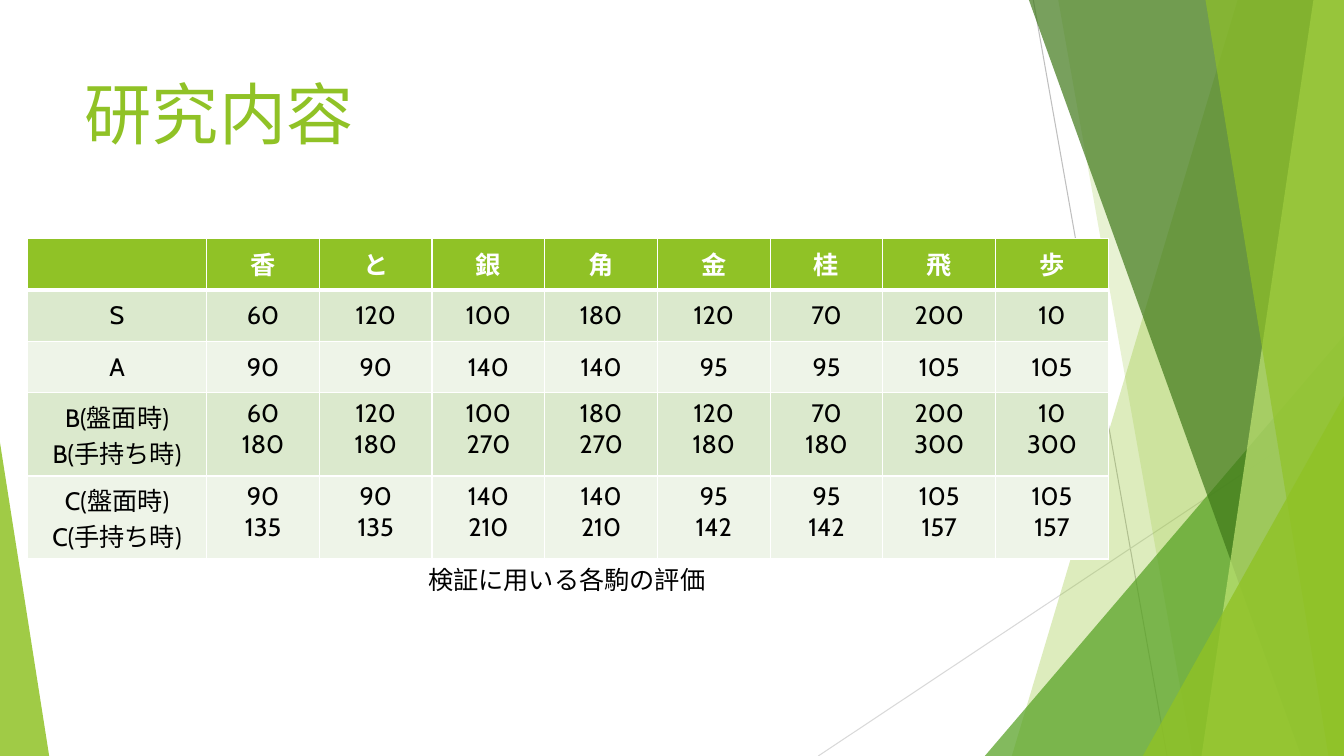
from lxml import etree
from pptx import Presentation
from pptx.dml.color import RGBColor
from pptx.enum import shapes, text
from pptx.oxml import ns
from pptx.util import Cm, Pt

COLORS = {"lime": "90C226", "green": "54A021", "forest": "3F7819", "pale": "C0E474",
          "gray": "BFBFBF", "light_gray": "D9D9D9", "white": "FFFFFF", "black": "000000",
          "band_dark": "DBE9CD", "band_light": "EEF4E8"}
FONT = "Cabin"
TITLE = "研究内容"
CAPTION = "検証に用いる各駒の評価"
PIECES = ["", "香", "と", "銀", "角", "金", "桂", "飛", "歩"]
ON_BOARD = {"S": [60, 120, 100, 180, 120, 70, 200, 10],
            "A": [90, 90, 140, 140, 95, 95, 105, 105]}
IN_HAND = {"B": [180, 180, 270, 270, 180, 180, 300, 300],
           "C": [135, 135, 210, 210, 142, 142, 157, 157]}

# Lengths in cm
WIDTH, HEIGHT = 33.87, 19.05
RAYS = [((26.04, 0), (29.41, HEIGHT), "gray"),
        ((WIDTH, 10.24), (20.62, HEIGHT), "light_gray")]
# ("pane", top x, bottom x, colour, opacity %): reaches the right edge
# ("triangle", left, top, width, apex, colour, opacity %): reaches the bottom
FACETS = [("pane", 31.19, 25.5, "lime", 30),
          ("pane", 26.67, 30.05, "lime", 20),
          ("triangle", 24.82, 8.46, 9.05, 1, "green", 72),
          ("pane", 25.93, 32.79, "forest", 70),
          ("pane", 33.1, 30.28, "pale", 70),
          ("pane", 30.38, 33.48, "lime", 65),
          ("triangle", 28.8, 9.98, 5.07, 1, "lime", 80),
          ("triangle", 0, 11.15, 1.24, 0, "lime", 85)]
TABLE_LEFT, TABLE_TOP = 0.69, 6.0
LABEL_WIDTH, VALUE_WIDTH, ROW_HEIGHT = 4.52, 2.84, 1.3


def rgb(name):
    return RGBColor.from_string(COLORS[name])


def write(tf, lines, color, size=18, bold=False, align=text.PP_ALIGN.CENTER):
    for i, line in enumerate(lines):
        p = tf.paragraphs[0] if i == 0 else tf.add_paragraph()
        p.alignment = align
        r = p.add_run()
        r.text = line
        for key, value in {"name": FONT, "size": Pt(size), "bold": bold}.items():
            setattr(r.font, key, value)
        r.font.color.rgb = rgb(color)


def add_ray(s, start, end, color):
    ray = s.shapes.add_connector(shapes.MSO_CONNECTOR.STRAIGHT,
                                 *(Cm(v) for v in start + end))
    ray.line.color.rgb = rgb(color)
    ray.line.width = Pt(0.75)
    etree.SubElement(ray.element.spPr, ns.qn("a:effectLst"))


def add_facet(s, kind, *values):
    *place, color, opacity = values
    if kind == "pane":
        top_x, bottom_x = place
        builder = s.shapes.build_freeform(Cm(top_x), 0)
        builder.add_line_segments([(Cm(x), Cm(y)) for x, y in
                                   [(WIDTH, 0), (WIDTH, HEIGHT), (bottom_x, HEIGHT)]])
        sp = builder.convert_to_shape()
    else:
        left, top, width, apex = place
        sp = s.shapes.add_shape(shapes.MSO_SHAPE.ISOSCELES_TRIANGLE, Cm(left), Cm(top),
                                Cm(width), Cm(HEIGHT - top))
        sp.adjustments[0] = apex
    sp.shadow.inherit = False
    sp.line.fill.background()
    sp.fill.solid()
    sp.fill.fore_color.rgb = rgb(color)
    clr = sp.element.spPr.find(ns.qn("a:solidFill")).find(ns.qn("a:srgbClr"))
    etree.SubElement(clr, ns.qn("a:alpha"), val=str(opacity * 1000))


def format_cell(cell, fill, widths):
    """Set the fill and the white borders, widths being in points by side."""
    tc_pr = cell._tc.get_or_add_tcPr()
    for side, width in widths.items():
        ln = etree.SubElement(tc_pr, ns.qn(f"a:ln{side}"), w=str(Pt(width)))
        solid = etree.SubElement(ln, ns.qn("a:solidFill"))
        etree.SubElement(solid, ns.qn("a:srgbClr"), val=COLORS["white"])
    cell.fill.solid()
    cell.fill.fore_color.rgb = rgb(fill)


def table_rows():
    """Return each row as cells, each cell being a list of lines."""
    rows = [[[piece] for piece in PIECES]]
    for name, values in ON_BOARD.items():
        rows.append([[name]] + [[str(v)] for v in values])
    for (name, held), board in zip(IN_HAND.items(), ON_BOARD.values()):
        rows.append([[f"{name}(盤面時)", f"{name}(手持ち時)"]]
                    + [[str(b), str(h)] for b, h in zip(board, held)])
    return rows


def add_value_table(s):
    rows = table_rows()
    widths = [LABEL_WIDTH] + [VALUE_WIDTH] * (len(PIECES) - 1)
    table = s.shapes.add_table(len(rows), len(widths), Cm(TABLE_LEFT), Cm(TABLE_TOP),
                               Cm(sum(widths)), Cm(ROW_HEIGHT * len(rows))).table
    for column, width in zip(table.columns, widths):
        column.width = Cm(width)
    for i, row in enumerate(rows):
        table.rows[i].height = Cm(ROW_HEIGHT)
        header = i == 0
        fill = "lime" if header else "band_dark" if i % 2 else "band_light"
        borders = {"L": 1, "R": 1, "T": 3 if i == 1 else 1, "B": 3 if header else 1}
        for j, lines in enumerate(row):
            cell = table.cell(i, j)
            format_cell(cell, fill, borders)
            cell.vertical_anchor = (text.MSO_ANCHOR.MIDDLE if len(lines) == 1
                                    else text.MSO_ANCHOR.TOP)
            if lines != [""]:
                write(cell.text_frame, lines, "white" if header else "black", bold=header)


def main():
    prs = Presentation()
    prs.slide_width, prs.slide_height = Cm(WIDTH), Cm(HEIGHT)
    s = prs.slides.add_slide(prs.slide_layouts[5])
    for ray in RAYS:
        add_ray(s, *ray)
    for facet in FACETS:
        add_facet(s, *facet)

    title = s.shapes.title
    title.element.getparent().append(title.element)
    for key, value in {"left": 1.88, "top": 1.7, "width": 23.88, "height": 3.66}.items():
        setattr(title, key, Cm(value))
    title.text_frame.vertical_anchor = text.MSO_ANCHOR.TOP
    write(title.text_frame, [TITLE], "lime", size=48, align=text.PP_ALIGN.LEFT)

    add_value_table(s)

    caption = s.shapes.add_textbox(Cm(10.54), Cm(14.1), Cm(7.57), Cm(1.02))
    tf = caption.text_frame
    tf.word_wrap = False
    tf.auto_size = text.MSO_AUTO_SIZE.SHAPE_TO_FIT_TEXT
    write(tf, [CAPTION], "black", align=text.PP_ALIGN.LEFT)
    prs.save("out.pptx")


if __name__ == "__main__":
    main()
